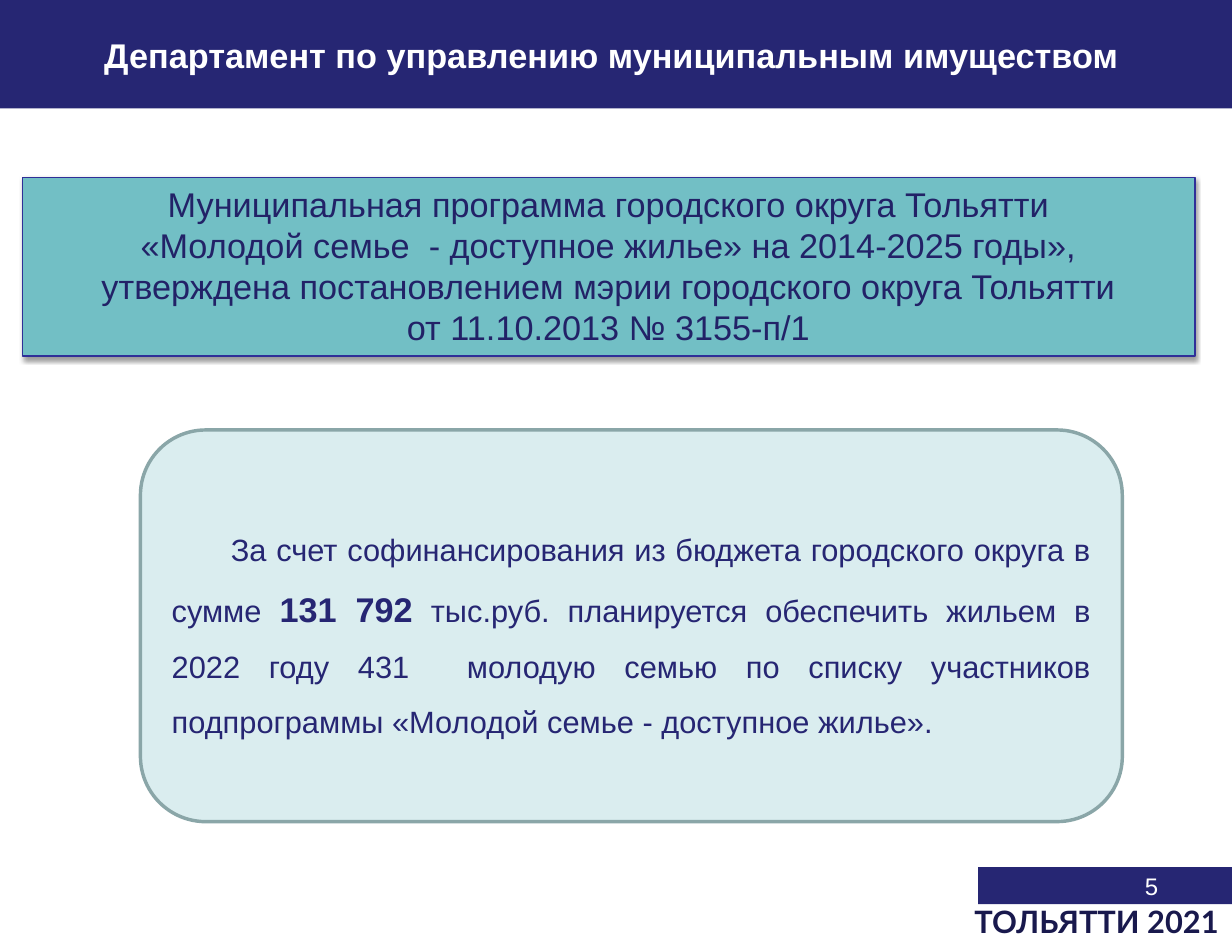
from dataclasses import dataclass
from typing import Optional

from lxml.etree import SubElement
from pptx import Presentation
from pptx.dml.color import RGBColor as Rgb
from pptx.enum.shapes import MSO_SHAPE as Form
from pptx.enum.text import MSO_ANCHOR as Anchor, PP_ALIGN as Align
from pptx.oxml.ns import qn
from pptx.util import Inches, Pt

HUES = {
    "navy": "262673",
    "ink": "222267",
    "dark": "19194D",
    "white": "FFFFFF",
    "teal": "72BFC5",
    "edge": "2F2F98",
    "pale": "DAEDEF",
    "grey": "8AA6A8",
}
CELL = 0.1  # side of a square grid cell, in inches


@dataclass
class Panel:
    """A filled shape; col, row, wide and high count grid cells."""
    col: float
    row: float
    wide: float
    high: float
    fill: str
    form: Form = Form.RECTANGLE
    line: Optional[str] = None
    width: float = 0


@dataclass
class Style:
    size: int
    hue: str
    align: Align = Align.LEFT
    bold: bool = False
    face: str = "Arial"
    space: float = 1.0


def hue(name: str) -> Rgb:
    return Rgb.from_string(HUES[name])


def place(*cells: float) -> list:
    return [Inches(n * CELL) for n in cells]


def draw(slide, item: Panel):
    shape = slide.shapes.add_shape(
        item.form, *place(item.col, item.row, item.wide, item.high))
    shape.shadow.inherit = False
    shape.fill.solid()
    shape.fill.fore_color.rgb = hue(item.fill)
    if item.line:
        shape.line.color.rgb = hue(item.line)
        shape.line.width = Pt(item.width)
    else:
        shape.line.fill.background()
    return shape


def label(slide, *cells: float):
    return slide.shapes.add_textbox(*place(*cells))


def write(shape, lines: list[str], style: Style,
          anchor: Anchor = Anchor.TOP, wrap: bool = True) -> None:
    frame = shape.text_frame
    frame.word_wrap = wrap
    frame.vertical_anchor = anchor
    frame.text = "\n".join(lines)
    for para in frame.paragraphs:
        dress(para, style)


def dress(para, style: Style) -> None:
    para.alignment = style.align
    para.line_spacing = style.space
    font = para.font
    font.size, font.bold, font.name = Pt(style.size), style.bold, style.face
    font.color.rgb = hue(style.hue)


def shade(shape) -> None:
    """Soft black shadow just below the shape."""
    root = shape._element.spPr.find(qn("a:effectLst"))
    cast = SubElement(root, qn("a:outerShdw"), blurRad=str(Pt(3.1)),
                      dist=str(Pt(1.6)), dir="5400000", rotWithShape="0")
    tint = SubElement(cast, qn("a:srgbClr"), val="000000")
    SubElement(tint, qn("a:alpha"), val="38000")


def main() -> None:
    deck = Presentation()
    deck.slide_width, deck.slide_height = Inches(10), Inches(7.72)
    slide = deck.slides.add_slide(deck.slide_layouts[6])

    # Page number strip
    draw(slide, Panel(79.4, 70.4, 20.6, 3, "navy"))
    write(label(slide, 71.7, 70.3, 23.3, 5.4), ["5"],
          Style(14, "white", Align.RIGHT))

    # Title band
    band = draw(slide, Panel(0, 0, 100, 8.8, "navy"))
    write(band, ["Департамент по управлению муниципальным имуществом"],
          Style(20, "white", Align.CENTER, True, space=0.8), Anchor.MIDDLE)
    frame = band.text_frame
    frame.margin_top, frame.margin_right = Inches(0.12), Inches(0.17)

    # City and year
    write(label(slide, 78.1, 73.4, 22.1, 3.5), ["ТОЛЬЯТТИ 2021"],
          Style(18, "dark", bold=True, face="Lato", space=0.8), wrap=False)

    # Programme name
    name = draw(slide, Panel(1.8, 14.4, 95.2, 14.5, "teal",
                             line="edge", width=0.75))
    shade(name)
    write(name, [
        "Муниципальная программа городского округа Тольятти",
        "«Молодой семье  - доступное жилье» на 2014-2025 годы»,",
        "утверждена постановлением мэрии городского округа Тольятти",
        "от 11.10.2013 № 3155-п/1",
    ], Style(20, "ink", Align.CENTER))

    # Funding note
    note = draw(slide, Panel(11.4, 34.9, 79.7, 31.8, "pale",
                             Form.ROUNDED_RECTANGLE, "grey", 2))
    write(note, ["За счет софинансирования из бюджета городского округа в "
                 "сумме "], Style(18, "navy", Align.JUSTIFY, space=1.5),
          Anchor.MIDDLE)
    para = note.text_frame.paragraphs[0]
    para._p.get_or_add_pPr().set("indent", str(Inches(0.48)))
    total = para.add_run()
    total.text = "131 792"
    total.font.size, total.font.bold = Pt(20), True
    para.add_run().text = (
        " тыс.руб. планируется обеспечить жильем в 2022 году 431  молодую "
        "семью по списку участников подпрограммы «Молодой семье - "
        "доступное жилье».")

    deck.save("out.pptx")


if __name__ == "__main__":
    main()
